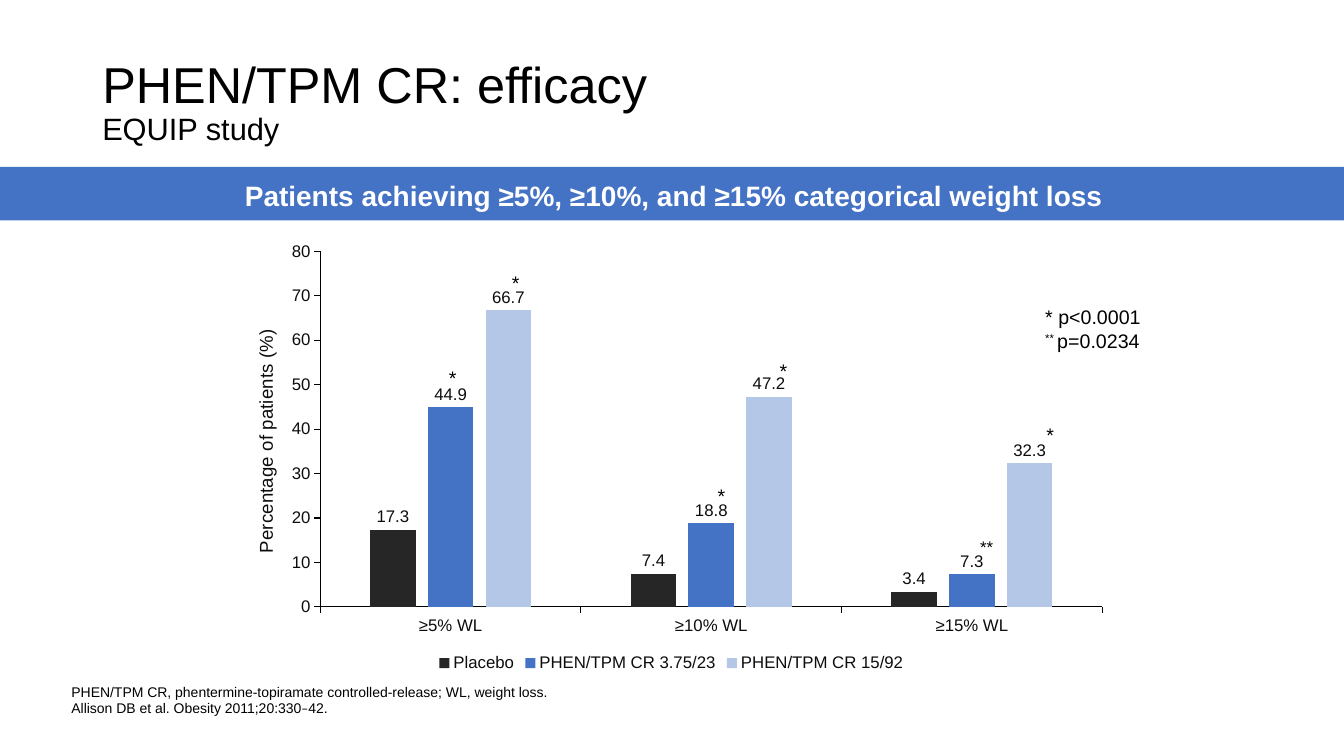
from dataclasses import dataclass

from lxml import etree
from pptx import Presentation
from pptx.chart.data import CategoryChartData
from pptx.dml.color import RGBColor
from pptx.enum.chart import XL_CHART_TYPE, XL_LABEL_POSITION, XL_LEGEND_POSITION, XL_TICK_MARK
from pptx.enum.shapes import MSO_SHAPE
from pptx.enum.text import MSO_ANCHOR, PP_ALIGN
from pptx.oxml.ns import qn
from pptx.util import Pt

EMU_PER_PX = 9525
BLACK = RGBColor(0x00, 0x00, 0x00)
WHITE = RGBColor(0xFF, 0xFF, 0xFF)
CHART_TEXT = RGBColor(0x0D, 0x0D, 0x0D)
CHARCOAL = RGBColor(0x26, 0x26, 0x26)
BLUE = RGBColor(0x44, 0x72, 0xC4)
LIGHT_BLUE = RGBColor(0xB4, 0xC7, 0xE7)
LEFT, CENTER = PP_ALIGN.LEFT, PP_ALIGN.CENTER
TOP, MIDDLE, BOTTOM = MSO_ANCHOR.TOP, MSO_ANCHOR.MIDDLE, MSO_ANCHOR.BOTTOM
OUTSIDE_END = XL_LABEL_POSITION.OUTSIDE_END
TICK_OUT, TICK_NONE = XL_TICK_MARK.OUTSIDE, XL_TICK_MARK.NONE


@dataclass(frozen=True)
class Box:
    left: int
    top: int
    width: int
    height: int

    def emu(self) -> tuple[int, ...]:
        return tuple(px(n) for n in (self.left, self.top, self.width, self.height))


@dataclass(frozen=True)
class DoseArm:
    name: str
    percentages: tuple[float, ...]
    color: RGBColor


@dataclass(frozen=True)
class Significance:
    mark: str
    box: Box
    size: int = 14
    wrap: bool = False
    align: PP_ALIGN = CENTER


CATEGORIES = ("≥5% WL", "≥10% WL", "≥15% WL")
DOSE_ARMS = (
    DoseArm("Placebo", (17.3, 7.4, 3.4), CHARCOAL),
    DoseArm("PHEN/TPM CR 3.75/23", (44.9, 18.8, 7.3), BLUE),
    DoseArm("PHEN/TPM CR 15/92", (66.7, 47.2, 32.3), LIGHT_BLUE),
)
SIGNIFICANCES = (
    Significance("*", Box(422, 344, 15, 32)),
    Significance("*", Box(482, 253, 15, 32)),
    Significance("*", Box(678, 456, 15, 32)),
    Significance("*", Box(737, 337, 15, 32)),
    Significance("*", Box(991, 398, 15, 32)),
    Significance("**", Box(924, 506, 122, 29), 12, True, LEFT),
)


def px(length: int) -> int:
    return length * EMU_PER_PX


def set_font(font, size: float, color: RGBColor = BLACK, name: str = "Arial", bold: bool = False) -> None:
    for attribute, value in {"size": Pt(size), "name": name, "bold": bold}.items():
        setattr(font, attribute, value)
    font.color.rgb = color


def add_run(paragraph, text: str, size: float, color: RGBColor = BLACK, **style):
    run = paragraph.add_run()
    run.text = text
    set_font(run.font, size, color, **style)
    return run


def add_text_frame(slide, box: Box, anchor: MSO_ANCHOR = TOP, wrap: bool = True):
    frame = slide.shapes.add_textbox(*box.emu()).text_frame
    frame.word_wrap = wrap
    frame.vertical_anchor = anchor
    return frame


def add_heading(slide) -> None:
    heading = add_text_frame(slide, Box(88, 29, 1104, 139), MIDDLE).paragraphs[0]
    heading.line_spacing = 0.9
    add_run(heading, "PHEN/TPM CR: efficacy", 36)
    heading.add_line_break()
    add_run(heading, "EQUIP study", 22)


def add_footnote(slide) -> None:
    frame = add_text_frame(slide, Box(68, 652, 1124, 30), BOTTOM)
    for side in ("left", "top", "right", "bottom"):
        setattr(frame, f"margin_{side}", 0)
    note = frame.paragraphs[0]
    note.line_spacing = 0.9
    add_run(note, "PHEN/TPM CR, phentermine-topiramate controlled-release; WL, weight loss.", 10)
    note.add_line_break()
    add_run(note, "Allison DB et al. Obesity 2011;20:330", 10)
    add_run(note, "–", 10, name="Calibri")
    add_run(note, "42.", 10)


def add_banner(slide) -> None:
    banner = slide.shapes.add_shape(MSO_SHAPE.RECTANGLE, *Box(0, 159, 1280, 51).emu())
    banner.shadow.inherit = False
    banner.fill.solid()
    banner.fill.fore_color.rgb = BLUE
    banner.line.fill.background()
    frame = banner.text_frame
    margins = {"margin_left": 14, "margin_right": 10, "margin_top": 2, "margin_bottom": 0}
    for attribute, margin in margins.items():
        setattr(frame, attribute, px(margin))
    frame.word_wrap = True
    frame.vertical_anchor = MIDDLE
    message = frame.paragraphs[0]
    message.alignment = CENTER
    add_run(message, "Patients achieving ≥5%, ≥10%, and ≥15% categorical weight loss", 20, WHITE, bold=True)


def set_manual_layout(element, **settings: str | float) -> None:
    """Place a chart part by fractions of the chart's size."""
    layout = element.find(qn("c:layout"))
    if layout is None:
        layout = etree.Element(qn("c:layout"))
        element.insert(0, layout)
    for child in list(layout):
        layout.remove(child)
    manual = etree.SubElement(layout, qn("c:manualLayout"))
    for tag, value in settings.items():
        etree.SubElement(manual, qn(f"c:{tag}")).set("val", str(value))


def style_axis(axis) -> None:
    axis.has_major_gridlines = False
    axis.major_tick_mark = TICK_OUT
    axis.minor_tick_mark = TICK_NONE
    axis.format.line.color.rgb = BLACK
    axis.format.line.width = Pt(0.75)
    set_font(axis.tick_labels.font, 12, CHART_TEXT)


def add_efficacy_chart(slide) -> None:
    data = CategoryChartData()
    data.categories = CATEGORIES
    for arm in DOSE_ARMS:
        data.add_series(arm.name, arm.percentages)
    chart = slide.shapes.add_chart(
        XL_CHART_TYPE.COLUMN_CLUSTERED, *Box(213, 222, 853, 422).emu(), data
    ).chart
    set_font(chart.font, 10)
    chart.has_title = False
    chart.has_legend = True
    chart.legend.position = XL_LEGEND_POSITION.BOTTOM
    chart.legend.include_in_layout = False
    set_font(chart.legend.font, 12, CHART_TEXT)

    percent_axis = chart.value_axis
    for axis in (chart.category_axis, percent_axis):
        style_axis(axis)
    for attribute, value in {"minimum_scale": 0, "maximum_scale": 80, "major_unit": 10}.items():
        setattr(percent_axis, attribute, value)
    axis_caption = percent_axis.axis_title.text_frame.paragraphs[0]
    add_run(axis_caption, "Percentage of patients (%)", 13.3, CHART_TEXT)
    caption_element = percent_axis.axis_title._element
    set_manual_layout(caption_element, xMode="edge", yMode="edge", x=0.03, y=0.21)
    set_manual_layout(
        chart._chartSpace.chart.plotArea,
        layoutTarget="inner", xMode="edge", yMode="edge", x=0.108, y=0.041, w=0.873, h=0.803,
    )

    plot = chart.plots[0]
    for attribute, value in {"gap_width": 219, "overlap": -27, "vary_by_categories": False}.items():
        setattr(plot, attribute, value)
    for series, arm in zip(plot.series, DOSE_ARMS):
        series.format.fill.solid()
        series.format.fill.fore_color.rgb = arm.color
        labels = series.data_labels
        labels.show_value = True
        labels.position = OUTSIDE_END
        set_font(labels.font, 12, CHART_TEXT)


def add_significance(slide, significance: Significance) -> None:
    frame = add_text_frame(slide, significance.box, wrap=significance.wrap)
    paragraph = frame.paragraphs[0]
    paragraph.alignment = significance.align
    add_run(paragraph, significance.mark, significance.size)


def add_p_values(slide) -> None:
    frame = add_text_frame(slide, Box(986, 286, 206, 55))
    add_run(frame.paragraphs[0], "* p<0.0001", 14)
    second = frame.add_paragraph()
    superscript = add_run(second, "** ", 14)
    superscript.font._element.set("baseline", "30000")
    add_run(second, "p=0.0234", 14)


def main() -> None:
    presentation = Presentation()
    presentation.slide_width, presentation.slide_height = px(1280), px(720)
    slide = presentation.slides.add_slide(presentation.slide_layouts[6])
    add_heading(slide)
    add_footnote(slide)
    add_banner(slide)
    add_efficacy_chart(slide)
    for significance in SIGNIFICANCES:
        add_significance(slide, significance)
    add_p_values(slide)
    presentation.save("out.pptx")


if __name__ == "__main__":
    main()
